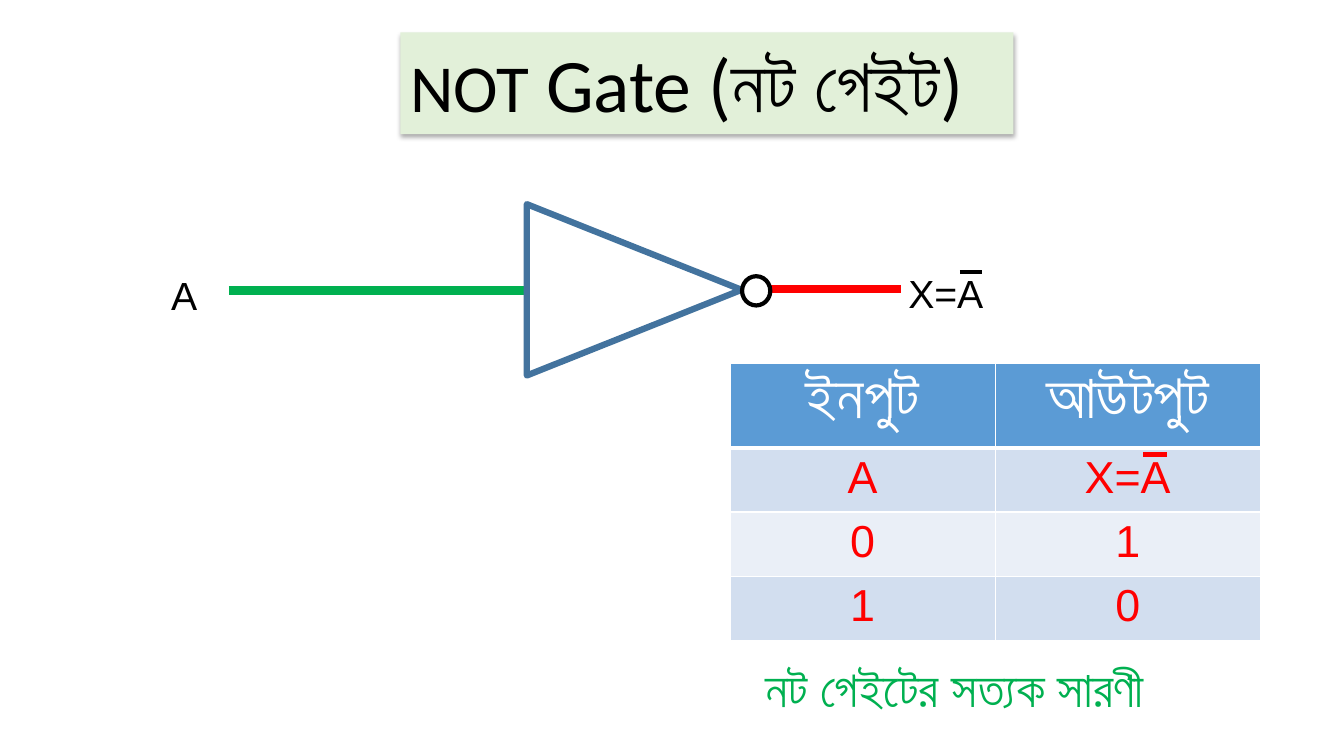
"""Build a slide on the NOT gate with its symbol and truth table."""
import pptx
import pptx.chart.data
import pptx.dml.color
import pptx.enum.shapes
import pptx.enum.text
import pptx.oxml
import pptx.oxml.ns
import pptx.util

Inches = pptx.util.Inches
Pt = pptx.util.Pt
RGBColor = pptx.dml.color.RGBColor
SHAPES = pptx.enum.shapes.MSO_SHAPE

BLACK = RGBColor(0x00, 0x00, 0x00)
WHITE = RGBColor(0xFF, 0xFF, 0xFF)
GREEN = RGBColor(0x00, 0xB0, 0x50)
RED = RGBColor(0xFF, 0x00, 0x00)
GATE_BLUE = RGBColor(0x43, 0x73, 0x9E)
TITLE_FILL = RGBColor(0xE2, 0xF0, 0xD9)
HEADER_FILL = RGBColor(0x5B, 0x9B, 0xD5)
BAND_FILLS = (RGBColor(0xEA, 0xEF, 0xF7), RGBColor(0xD2, 0xDE, 0xEF))

TITLE_SPANS = [("NOT", 48), (" Gate (নট গেইট)", 54)]
TITLE_PLACE = (3.97, 0.32, 6.08, 1.01)
LABELS = [
    ("A", (1.6, 2.64, 0.46, 0.57), {"name": "Arial", "size": Pt(28)}, BLACK),
    ("X=A", (8.91, 2.62, 0.95, 0.57), {"name": "Arial", "size": Pt(28)}, BLACK),
    ("নট গেইটের সত্যক সারণী", (7.49, 6.47, 4.08, 0.71),
     {"name": "Calibri", "size": Pt(36)}, GREEN),
]
TRUTH_TABLE = [("ইনপুট", "আউটপুট"), ("A", "X=A"), ("0", "1"), ("1", "0")]
TABLE_PLACE = (7.24, 3.61, 5.26, 2.73)
HEADER_HEIGHT = 0.82
HEADER_FONT = {"name": "Calibri", "size": Pt(44), "bold": True}
BODY_FONT = {"name": "Arial", "size": Pt(32), "bold": False}
INPUT_WIRE = (2.27, 5.22, 2.88, GREEN, 6)
OUTPUT_WIRE = (7.63, 8.94, 2.87, RED, 6)
OVERLINES = [(9.52, 9.74, 2.7, BLACK, 3), (11.34, 11.57, 4.51, RED, 3)]
GATE_PLACE = (5.44, 1.81, 1.7, 2.13)
BUBBLE_PLACE = (7.36, 2.74, 0.28, 0.29)

TITLE_SHADOW = (
    f'<a:effectLst {pptx.oxml.ns.nsdecls("a")}>'
    '<a:outerShdw blurRad="44450" dist="27940" dir="5400000" algn="ctr" rotWithShape="0">'
    '<a:srgbClr val="000000"><a:alpha val="32000"/></a:srgbClr>'
    '</a:outerShdw></a:effectLst>'
)


def inches(place):
    return [Inches(length) for length in place]


def add_span(para, text, font_format, color):
    span = para.add_run()
    span.text = text
    for name, value in font_format.items():
        setattr(span.font, name, value)
    span.font.color.rgb = color


def add_wire(shapes, wire):
    left, right, height, color, width = wire
    line = shapes.add_connector(pptx.enum.shapes.MSO_CONNECTOR.STRAIGHT,
                                *inches((left, height, right, height)))
    line.line.color.rgb = color
    line.line.width = Pt(width)
    properties = line._element.spPr
    properties.append(pptx.oxml.parse_xml(f'<a:effectLst {pptx.oxml.ns.nsdecls("a")}/>'))


def add_outline(shapes, kind, place, color, width):
    shape = shapes.add_shape(kind, *inches(place))
    shape.shadow.inherit = False
    shape.fill.background()
    shape.line.color.rgb = color
    shape.line.width = Pt(width)
    return shape


def add_title(page):
    box = page.shapes.add_shape(SHAPES.RECTANGLE, *inches(TITLE_PLACE))
    box.fill.solid()
    box.fill.fore_color.rgb = TITLE_FILL
    box.line.fill.background()
    box._element.spPr.append(pptx.oxml.parse_xml(TITLE_SHADOW))
    frame = box.text_frame
    frame.word_wrap = True
    frame.auto_size = pptx.enum.text.MSO_AUTO_SIZE.SHAPE_TO_FIT_TEXT
    frame.vertical_anchor = pptx.enum.text.MSO_ANCHOR.TOP
    para = frame.paragraphs[0]
    para.alignment = pptx.enum.text.PP_ALIGN.LEFT
    for text, size in TITLE_SPANS:
        add_span(para, text, {"name": "Calibri", "size": Pt(size)}, BLACK)


def add_label(page, text, place, font_format, color):
    frame = page.shapes.add_textbox(*inches(place)).text_frame
    frame.word_wrap = False
    frame.auto_size = pptx.enum.text.MSO_AUTO_SIZE.SHAPE_TO_FIT_TEXT
    add_span(frame.paragraphs[0], text, font_format, color)


def add_borders(cell, widths):
    properties = cell._tc.get_or_add_tcPr()
    for position, (side, width) in enumerate(widths.items()):
        properties.insert(position, pptx.oxml.parse_xml(
            f'<a:ln{side} {pptx.oxml.ns.nsdecls("a")} w="{Pt(width)}">'
            f'<a:solidFill><a:srgbClr val="{WHITE}"/></a:solidFill></a:ln{side}>'))


def add_truth_table(page):
    row_count, column_count = len(TRUTH_TABLE), len(TRUTH_TABLE[0])
    table = page.shapes.add_table(row_count, column_count, *inches(TABLE_PLACE)).table
    body_height = (TABLE_PLACE[3] - HEADER_HEIGHT) / (row_count - 1)
    for row, texts in enumerate(TRUTH_TABLE):
        header = row == 0
        table.rows[row].height = Inches(HEADER_HEIGHT if header else body_height)
        for column, text in enumerate(texts):
            cell = table.cell(row, column)
            cell.fill.solid()
            cell.fill.fore_color.rgb = HEADER_FILL if header else BAND_FILLS[row % 2]
            add_borders(cell, {"L": 1, "R": 1, "T": 3 if row == 1 else 1,
                               "B": 3 if header else 1})
            para = cell.text_frame.paragraphs[0]
            para.alignment = pptx.enum.text.PP_ALIGN.CENTER
            add_span(para, text, HEADER_FONT if header else BODY_FONT,
                     WHITE if header else RED)


def main():
    deck = pptx.Presentation()
    deck.slide_width, deck.slide_height = inches((13.33, 7.5))
    page = deck.slides.add_slide(deck.slide_layouts[6])
    add_wire(page.shapes, INPUT_WIRE)
    gate = add_outline(page.shapes, SHAPES.FLOWCHART_MERGE, GATE_PLACE, GATE_BLUE, 4.5)
    gate.rotation = 270
    add_title(page)
    add_truth_table(page)
    for label in LABELS:
        add_label(page, *label)
    for overline in OVERLINES:
        add_wire(page.shapes, overline)
    output = page.shapes.add_group_shape()
    add_wire(output.shapes, OUTPUT_WIRE)
    bubble = add_outline(output.shapes, SHAPES.OVAL, BUBBLE_PLACE, BLACK, 3)
    bubble.fill.solid()
    bubble.fill.fore_color.rgb = WHITE
    deck.save("out.pptx")


if __name__ == "__main__":
    main()
